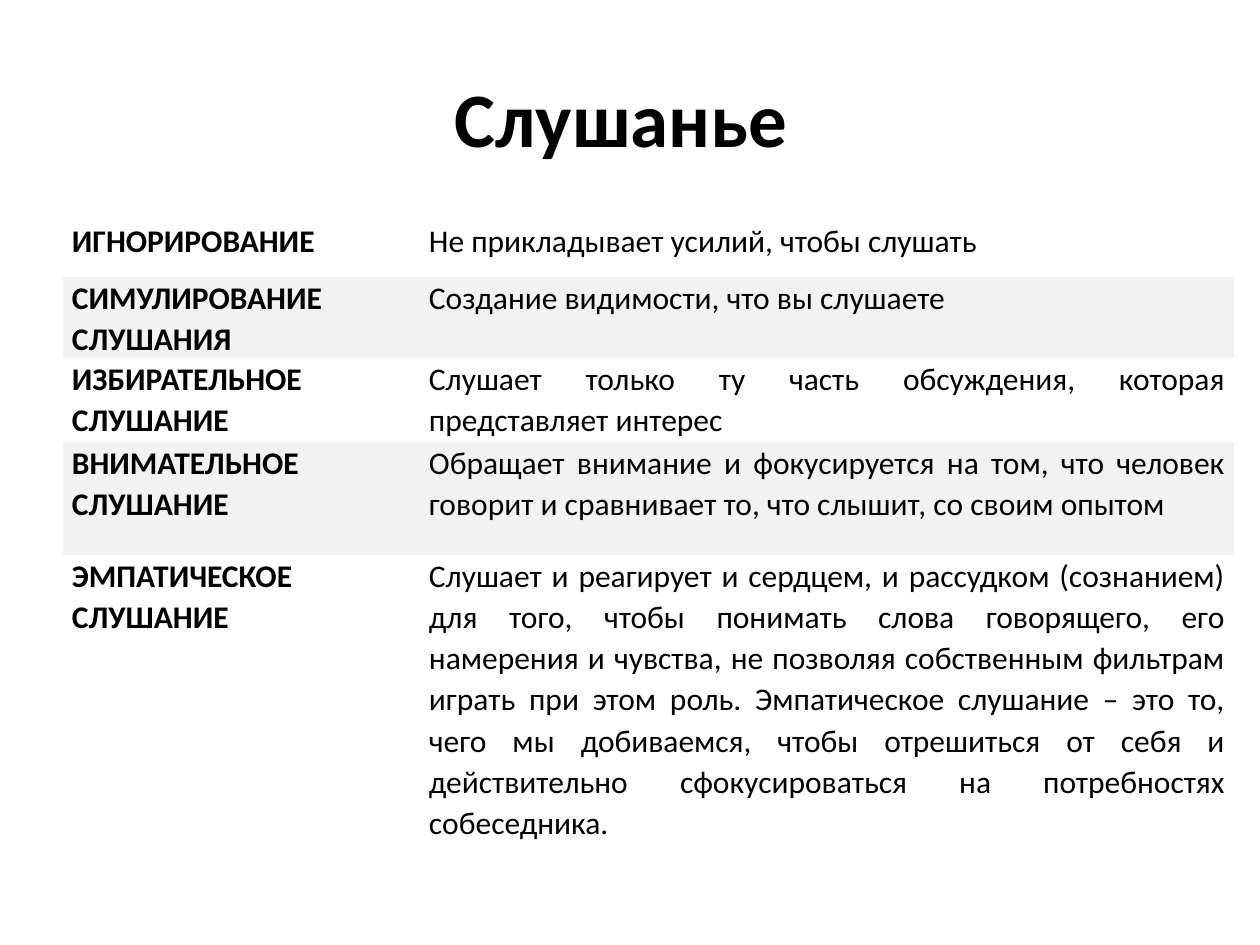
"""Build the slide on the five levels of listening."""
from pptx import Presentation
from pptx import util as u
from pptx.dml.color import RGBColor
from pptx.enum import text

PX = 7257
INK = {"text": "000000", "band": "F2F2F2"}
WIDE = [357, 814]
HIGH = [57, 57, 84, 113, 311]
ROWS = [
    ("ИГНОРИРОВАНИЕ", "Не прикладывает усилий, чтобы слушать"),
    ("СИМУЛИРОВАНИЕ СЛУШАНИЯ", "Создание видимости, что вы слушаете"),
    ("ИЗБИРАТЕЛЬНОЕ СЛУШАНИЕ",
     "Слушает только ту часть обсуждения, которая представляет интерес"),
    ("ВНИМАТЕЛЬНОЕ СЛУШАНИЕ",
     "Обращает внимание и фокусируется на том, что человек говорит "
     "и сравнивает то, что слышит, со своим опытом"),
    ("ЭМПАТИЧЕСКОЕ СЛУШАНИЕ",
     "Слушает и реагирует и сердцем, и рассудком (сознанием) для того, "
     "чтобы понимать слова говорящего, его намерения и чувства, не позволяя "
     "собственным фильтрам играть при этом роль. Эмпатическое слушание – это "
     "то, чего мы добиваемся, чтобы отрешиться от себя и действительно "
     "сфокусироваться на потребностях собеседника."),
]


def write(frame, words, size, bold, align):
    frame.text = words
    para = frame.paragraphs[0]
    para.alignment = align
    font = para.runs[0].font
    font.name, font.size, font.bold = "Calibri", u.Pt(size), bold
    font.color.rgb = RGBColor.from_string(INK["text"])
    return para


deck = Presentation()
deck.slide_width, deck.slide_height = 1260 * PX, 945 * PX
slide = deck.slides.add_slide(deck.slide_layouts[6])

title = slide.shapes.add_textbox(63 * PX, 38 * PX, 1134 * PX, 157 * PX)
title.text_frame.word_wrap = True
title.text_frame.vertical_anchor = text.MSO_ANCHOR.MIDDLE
write(title.text_frame, "Слушанье ", 44, True, text.PP_ALIGN.CENTER)

frame = slide.shapes.add_table(len(HIGH), len(WIDE), 63 * PX, 220 * PX,
                               sum(WIDE) * PX, sum(HIGH) * PX)
table = frame.table
table.first_row = table.horz_banding = False
style = table._tbl.tblPr[0]
style.text = "{2D5ABB26-0587-4C30-8999-92F81FD0307C}"
for col, wide in zip(table.columns, WIDE):
    col.width = wide * PX

for r, (row, high) in enumerate(zip(table.rows, HIGH)):
    row.height = high * PX
    for c, cell in enumerate(row.cells):
        cell.margin_left = cell.margin_right = 9 * PX
        cell.margin_top = cell.margin_bottom = 0
        align = text.PP_ALIGN.JUSTIFY if c else text.PP_ALIGN.LEFT
        para = write(cell.text_frame, ROWS[r][c], 18, c == 0, align)
        para.line_spacing = 1.07
        if r % 2:
            cell.fill.solid()
            cell.fill.fore_color.rgb = RGBColor.from_string(INK["band"])
        else:
            cell.fill.background()

deck.save("out.pptx")
